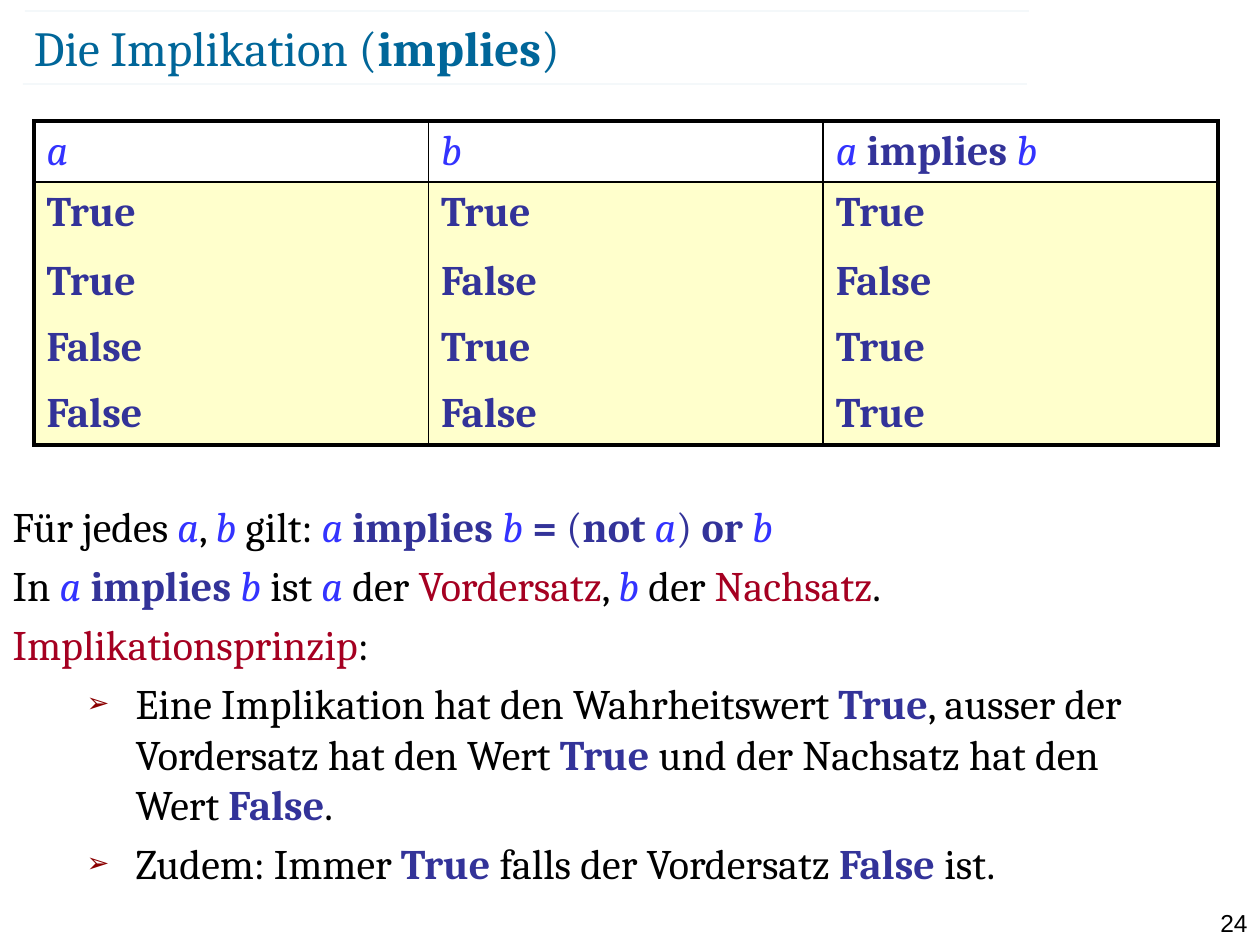
"""Build a slide on logical implication: truth table, definition and principle."""
from dataclasses import dataclass

from lxml import etree
from pptx import Presentation
from pptx.dml.color import RGBColor
from pptx.enum.shapes import MSO_CONNECTOR
from pptx.enum.text import MSO_ANCHOR, MSO_AUTO_SIZE, PP_ALIGN
from pptx.oxml.ns import qn
from pptx.util import Emu, Pt

STRAIGHT = MSO_CONNECTOR.STRAIGHT
MIDDLE, TOP = MSO_ANCHOR.MIDDLE, MSO_ANCHOR.TOP
LEFT, RIGHT = PP_ALIGN.LEFT, PP_ALIGN.RIGHT
NO_AUTOFIT = MSO_AUTO_SIZE.NONE


@dataclass(frozen=True)
class Theme:
    heading: str = "006699"
    text: str = "000000"
    variable: str = "3333FF"
    keyword: str = "333399"
    term: str = "A50021"
    bullet: str = "8B0000"
    cell: str = "FFFFCC"
    font: str = "Cambria"
    number_font: str = "Arial"
    title_size: int = 28
    body_size: int = 24
    number_size: int = 14
    space_before: int = 5
    outer_border: float = 2.25
    inner_border: int = 1
    rule_width: float = 0.1
    rule_opacity: int = 35


THEME = Theme()
STYLES = {
    "heading": (THEME.heading, False, False),
    "heading keyword": (THEME.heading, True, False),
    "text": (THEME.text, False, False),
    "variable": (THEME.variable, False, True),
    "keyword": (THEME.keyword, True, False),
    "symbol": (THEME.keyword, False, False),
    "term": (THEME.term, False, False),
}


def variable(text):
    return text, "variable"


def keyword(text):
    return text, "keyword"


def plain(text):
    return text, "text"


def term(text):
    return text, "term"


TITLE = [("Die Implikation (", "heading"), ("implies", "heading keyword"), (")", "heading")]
HEADER = [[variable("a")], [variable("b")],
          [variable("a "), keyword("implies "), variable("b")]]
TRUTH_VALUES = [("True", "True", "True"), ("True", "False", "False"),
                ("False", "True", "True"), ("False", "False", "True")]
BODY = [
    (0, [plain("Für jedes "), variable("a"), plain(", "), variable("b"), plain(" gilt: "),
         variable("a "), keyword("implies "), variable("b "), keyword("= "), ("(", "symbol"),
         keyword("not "), variable("a"), (") ", "symbol"), keyword("or "), variable("b")]),
    (0, [plain("In "), variable("a "), keyword("implies "), variable("b "), plain("ist "),
         variable("a "), plain("der "), term("Vordersatz"), plain(", "), variable("b "),
         plain("der "), term("Nachsatz"), plain(".")]),
    (0, [term("Implikationsprinzip"), plain(":")]),
    (1, [plain("Eine Implikation hat den Wahrheitswert "), keyword("True"),
         plain(", ausser der Vordersatz hat den Wert "), keyword("True"),
         plain(" und der Nachsatz hat den Wert "), keyword("False"), plain(".")]),
    (1, [plain("Zudem: Immer "), keyword("True "), plain("falls der Vordersatz "),
         keyword("False "), plain("ist.")]),
]
SLIDE_NUMBER = "24"

SLIDE_SIZE = (1260, 945)
TITLE_BOX = (34, 16, 1095, 61)
TABLE_BOX = (34, 121, 1184, 309)
BODY_BOX = (0, 494, 1201, 423)
NUMBER_BOX = (1191, 902, 69, 30)
ROW_HEIGHTS = (53, 69, 67, 66, 54)
RULES = ((23, 84), (25, 11))
RULE_LENGTH = 1004
BULLET_MARGIN, BULLET_HANG = 123, 49


def px(value):
    return Emu(round(value * 914400 / 126))


def box(values):
    return [px(value) for value in values]


def place(shape, values):
    shape.left, shape.top, shape.width, shape.height = box(values)


def color(value):
    return RGBColor.from_string(value)


def write(paragraph, runs, size):
    paragraph.font.name, paragraph.font.size = THEME.font, Pt(size)
    for text, style in runs:
        run = paragraph.add_run()
        run.text = text
        tone, run.font.bold, run.font.italic = STYLES[style]
        run.font.color.rgb = color(tone)


def add_element(parent, tag, **attributes):
    return etree.SubElement(parent, qn(tag), attributes)


def set_bullet(paragraph, level):
    properties = paragraph._p.get_or_add_pPr()
    if level == 0:
        properties.set("marL", "0")
        properties.set("indent", "0")
        add_element(properties, "a:buNone")
        return
    paragraph.level = level
    properties.set("marL", str(px(BULLET_MARGIN)))
    properties.set("indent", str(px(-BULLET_HANG)))
    add_element(add_element(properties, "a:buClr"), "a:srgbClr", val=THEME.bullet)
    add_element(properties, "a:buSzPct", val="65000")
    add_element(properties, "a:buChar", char="➢")


def set_border(cell, side, width):
    line = add_element(cell._tc.get_or_add_tcPr(), f"a:ln{side}", w=str(Pt(width)))
    if width:
        add_element(add_element(line, "a:solidFill"), "a:srgbClr", val=THEME.text)
    else:
        add_element(line, "a:noFill")


def add_rule(slide, left, top):
    rule = slide.shapes.add_connector(STRAIGHT, *box((left, top, left + RULE_LENGTH, top)))
    rule.line.width = Pt(THEME.rule_width)
    rule.line.color.rgb = color(THEME.heading)
    tone = rule.line._ln.find(".//" + qn("a:srgbClr"))
    add_element(tone, "a:alpha", val=str(THEME.rule_opacity * 1000))
    add_element(rule._element.spPr, "a:effectLst")


def add_title(slide):
    title = slide.shapes.title
    place(title, TITLE_BOX)
    frame = title.text_frame
    frame.margin_left = frame.margin_right = frame.margin_top = frame.margin_bottom = 0
    frame.vertical_anchor, frame.auto_size = MIDDLE, NO_AUTOFIT
    frame.paragraphs[0].alignment = LEFT
    write(frame.paragraphs[0], TITLE, THEME.title_size)


def add_truth_table(slide):
    rows = [HEADER] + [[[keyword(value)] for value in row] for row in TRUTH_VALUES]
    last_row, last_column = len(rows) - 1, len(HEADER) - 1
    table = slide.shapes.add_table(len(rows), len(HEADER), *box(TABLE_BOX)).table
    table.first_row = table.horz_banding = False
    outer, inner = THEME.outer_border, THEME.inner_border
    for row_index, row in enumerate(rows):
        table.rows[row_index].height = px(ROW_HEIGHTS[row_index])
        for column_index, runs in enumerate(row):
            cell = table.cell(row_index, column_index)
            write(cell.text_frame.paragraphs[0], runs, THEME.body_size)
            set_border(cell, "L", outer if column_index == 0 else inner)
            set_border(cell, "R", outer if column_index == last_column else inner)
            set_border(cell, "T", {0: outer, 1: inner}.get(row_index, 0))
            set_border(cell, "B", {0: inner, last_row: outer}.get(row_index, 0))
            if row_index == 0:
                cell.fill.background()
            else:
                cell.fill.solid()
                cell.fill.fore_color.rgb = color(THEME.cell)


def add_body(slide):
    body = slide.placeholders[1]
    place(body, BODY_BOX)
    frame = body.text_frame
    frame.auto_size, frame.vertical_anchor = NO_AUTOFIT, TOP
    for index, (level, runs) in enumerate(BODY):
        paragraph = frame.add_paragraph() if index else frame.paragraphs[0]
        set_bullet(paragraph, level)
        paragraph.space_before = Pt(THEME.space_before if index else 0)
        write(paragraph, runs, THEME.body_size)


def add_slide_number(slide):
    frame = slide.shapes.add_textbox(*box(NUMBER_BOX)).text_frame
    frame.word_wrap = True
    paragraph = frame.paragraphs[0]
    paragraph.text, paragraph.alignment = SLIDE_NUMBER, RIGHT
    paragraph.font.name, paragraph.font.size = THEME.number_font, Pt(THEME.number_size)
    paragraph.font.color.rgb = color(THEME.text)


def main():
    presentation = Presentation()
    presentation.slide_width, presentation.slide_height = box(SLIDE_SIZE)
    slide = presentation.slides.add_slide(presentation.slide_layouts[1])
    for left, top in RULES:
        add_rule(slide, left, top)
    add_title(slide)
    add_truth_table(slide)
    add_body(slide)
    add_slide_number(slide)
    presentation.save("out.pptx")


if __name__ == "__main__":
    main()
